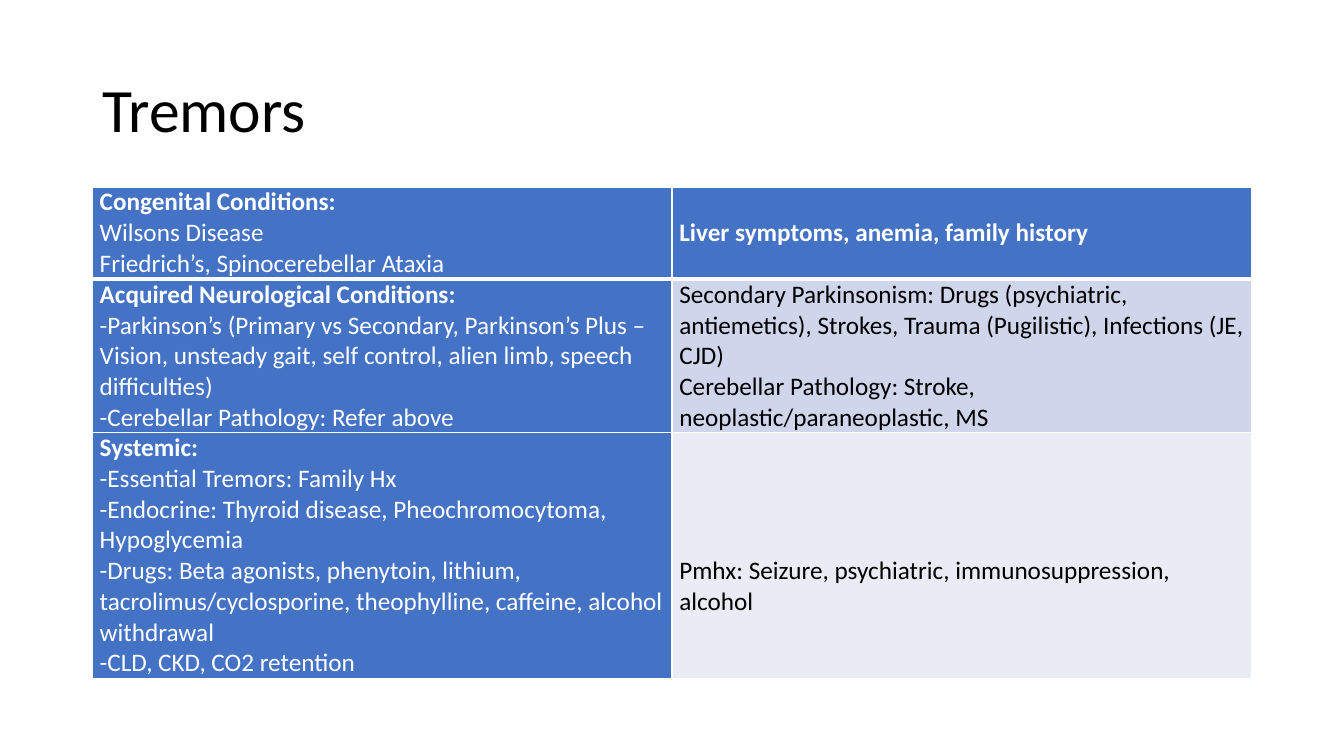
from dataclasses import dataclass

from lxml.etree import SubElement
from pptx import Presentation
from pptx.dml.color import RGBColor
from pptx.enum.text import MSO_ANCHOR
from pptx.oxml.ns import qn
from pptx.util import Pt


@dataclass(frozen=True)
class Theme:
    font: str = "Calibri"
    title: int = 44
    body: int = 18
    black: str = "000000"
    white: str = "FFFFFF"
    blue: str = "4472C4"
    band: str = "CFD5EA"
    pale: str = "E9EBF5"
    thin: int = 1
    thick: int = 3


@dataclass
class Cell:
    lines: list
    fill: str
    color: str
    heads: int = 0
    top: int = 0


class Deck:
    """Builds a styled slide from lengths given in px, 96 to the inch."""

    def __init__(self, theme, width, height):
        self.theme = theme
        self.file = Presentation()
        self.file.slide_width = self.px(width)
        self.file.slide_height = self.px(height)
        self.slide = self.file.slides.add_slide(self.file.slide_layouts[6])

    def px(self, length):
        return length * 9525

    def text(self, frame, lines, size, color, heads=0):
        frame.word_wrap = True
        for i, line in enumerate(lines):
            para = frame.paragraphs[0] if i == 0 else frame.add_paragraph()
            para.text = line
            font = para.font
            font.name = self.theme.font
            font.size = Pt(size)
            font.bold = i < heads
            font.color.rgb = RGBColor.from_string(color)

    def title(self, text, *box):
        frame = self.slide.shapes.add_textbox(*map(self.px, box)).text_frame
        frame.vertical_anchor = MSO_ANCHOR.MIDDLE
        self.text(frame, [text], self.theme.title, self.theme.black)
        frame.paragraphs[0].line_spacing = 0.9

    def edge(self, cell, side, width):
        line = SubElement(cell._tc.get_or_add_tcPr(), qn(f"a:ln{side}"), w=str(Pt(width)))
        fill = SubElement(line, qn("a:solidFill"))
        SubElement(fill, qn("a:srgbClr"), val=self.theme.white)

    def cell(self, cell, data, row):
        theme = self.theme
        cell.margin_left = cell.margin_right = self.px(7)
        cell.margin_top, cell.margin_bottom = self.px(data.top), 0
        rule = {"T": row == 1, "B": row == 0}
        for side in "LRTB":
            self.edge(cell, side, theme.thick if rule.get(side) else theme.thin)
        cell.fill.solid()
        cell.fill.fore_color.rgb = RGBColor.from_string(data.fill)
        self.text(cell.text_frame, data.lines, theme.body, data.color, data.heads)

    def table(self, rows, highs, left, top, width):
        cols = len(rows[0])
        box = map(self.px, (left, top, width, sum(highs)))
        table = self.slide.shapes.add_table(len(rows), cols, *box).table
        table.first_col = True
        for i, (row, high) in enumerate(zip(rows, highs)):
            table.rows[i].height = self.px(high)
            for j, data in enumerate(row):
                self.cell(table.cell(i, j), data, i)

    def save(self):
        self.file.save("out.pptx")


def main():
    theme = Theme()
    rows = [
        [
            Cell([
                "Congenital Conditions:",
                "Wilsons Disease",
                "Friedrich’s, Spinocerebellar Ataxia",
            ], theme.blue, theme.white, heads=1),
            Cell(["Liver symptoms, anemia, family history"],
                 theme.blue, theme.white, heads=1, top=29),
        ],
        [
            Cell([
                "Acquired Neurological Conditions:",
                "-Parkinson’s (Primary vs Secondary, Parkinson’s Plus – Vision, "
                "unsteady gait, self control, alien limb, speech difficulties)",
                "-Cerebellar Pathology: Refer above",
            ], theme.blue, theme.white, heads=1),
            Cell([
                "Secondary Parkinsonism: Drugs (psychiatric, antiemetics), Strokes, "
                "Trauma (Pugilistic), Infections (JE, CJD)",
                "Cerebellar Pathology: Stroke, neoplastic/paraneoplastic, MS",
            ], theme.band, theme.black),
        ],
        [
            Cell([
                "Systemic:",
                "-Essential Tremors: Family Hx",
                "-Endocrine: Thyroid disease, Pheochromocytoma, Hypoglycemia",
                "-Drugs: Beta agonists, phenytoin, lithium, tacrolimus/cyclosporine, "
                "theophylline, caffeine, alcohol withdrawal",
                "-CLD, CKD, CO2 retention",
            ], theme.blue, theme.white, heads=1),
            Cell(["Pmhx: Seizure, psychiatric, immunosuppression, alcohol"],
                 theme.pale, theme.black, top=117),
        ],
    ]
    deck = Deck(theme, 1280, 720)
    deck.title("Tremors", 88, 38, 1104, 139)
    deck.table(rows, [88, 146, 234], 88, 178, 1104)
    deck.save()


if __name__ == "__main__":
    main()
